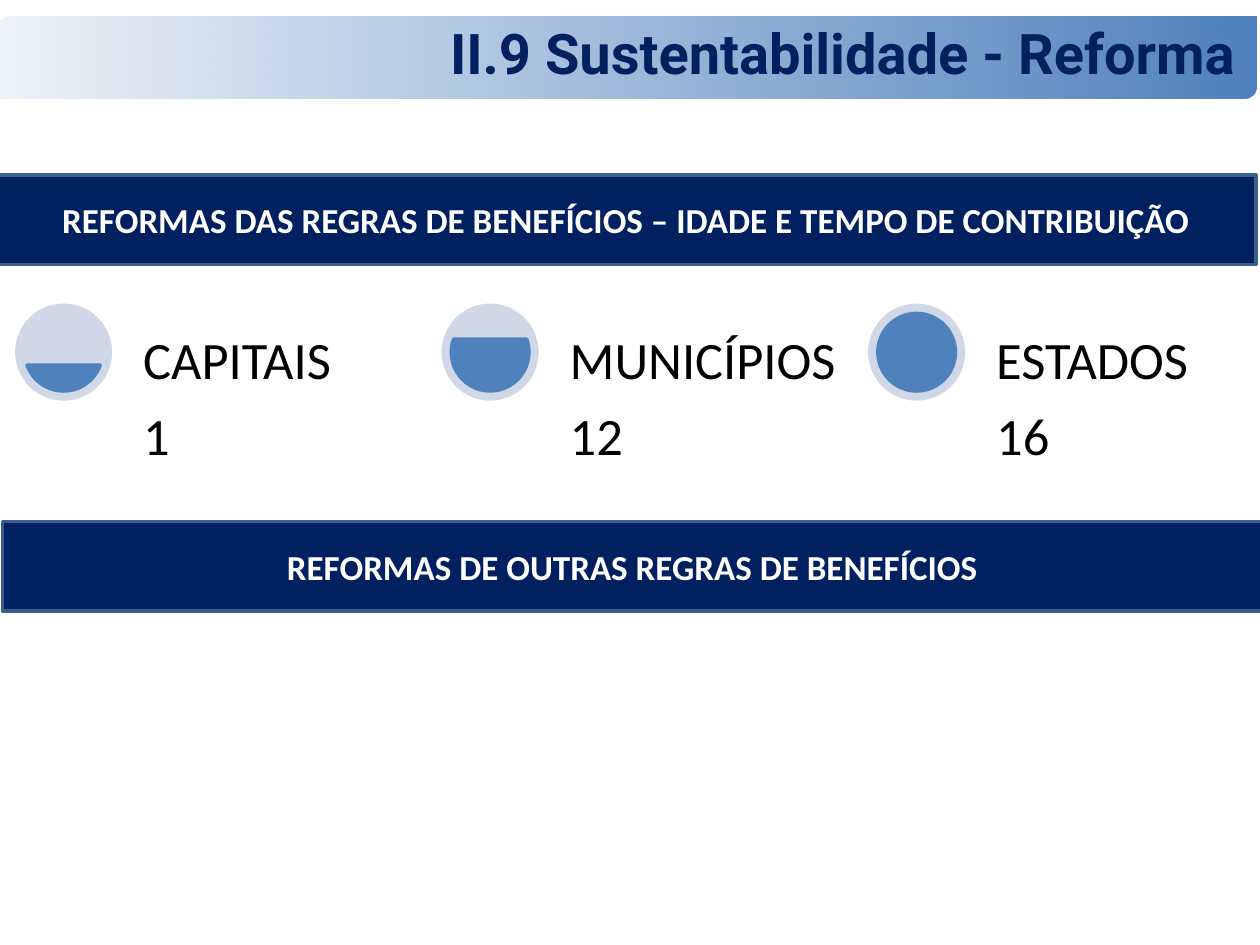
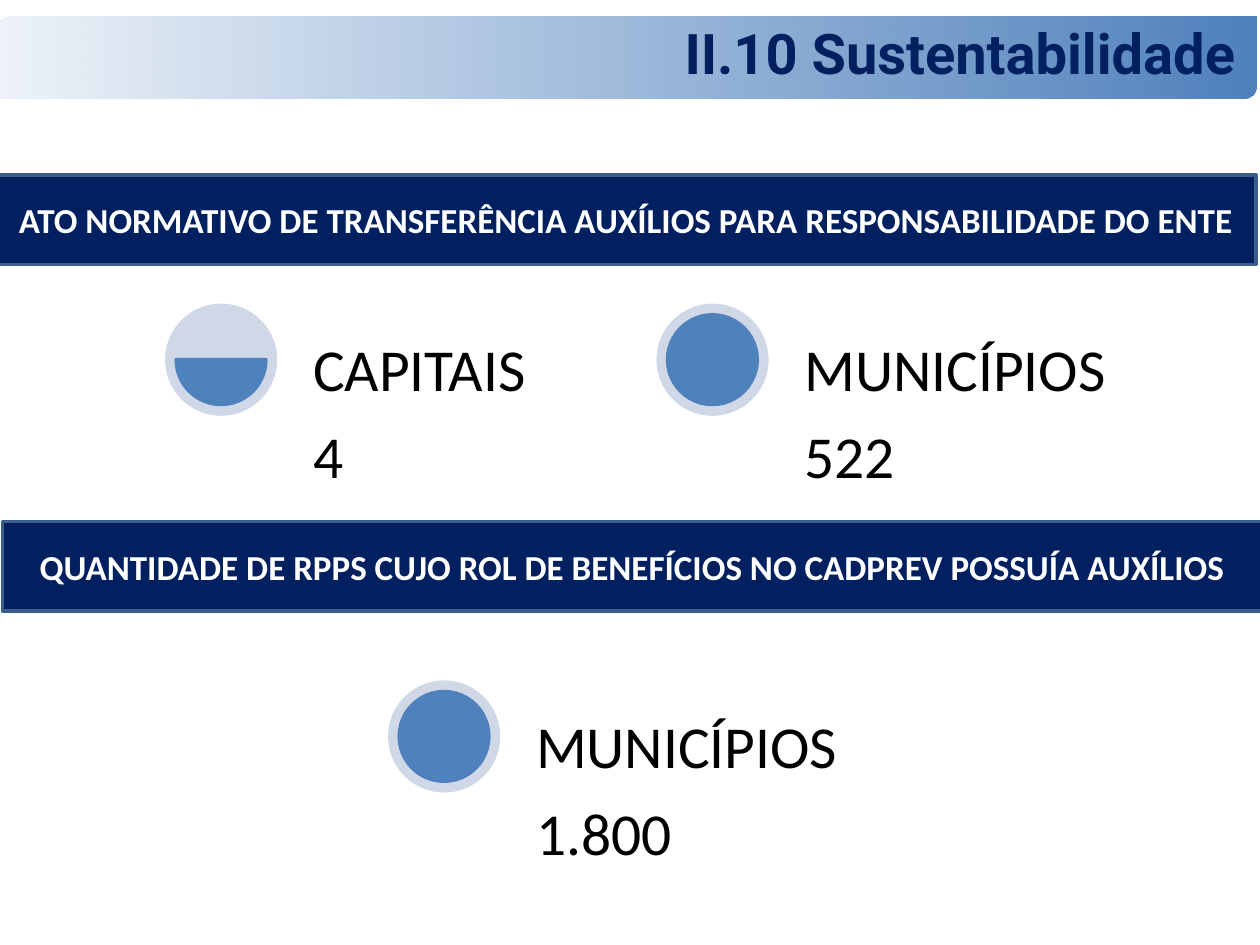
"""Build two slides on pension reform counts with partly filled dials."""
from math import asin, degrees

from lxml import etree
from pptx import Presentation
from pptx import util as u
from pptx.dml.color import RGBColor
from pptx.enum import shapes, text
from pptx.oxml.ns import qn

BLUE = RGBColor(0x4F, 0x81, 0xBD)
PALE = RGBColor(0xD0, 0xD8, 0xE8)
NAVY = RGBColor(0x00, 0x20, 0x60)
EDGE = RGBColor(0x3A, 0x5F, 0x8C)
WHITE = RGBColor(0xFF, 0xFF, 0xFF)
BLACK = RGBColor(0x00, 0x00, 0x00)

KIND = shapes.MSO_SHAPE
ALIGN = text.PP_ALIGN
ANCHOR = text.MSO_ANCHOR


def add_form(slide, kind, box, fill=None, line=None):
    """Add a preset shape with an optional fill and 2 pt line."""
    form = slide.shapes.add_shape(kind, *map(u.Inches, box))
    form.shadow.inherit = False
    if fill is not None:
        form.fill.solid()
        form.fill.fore_color.rgb = fill
    if line is None:
        form.line.fill.background()
    else:
        form.line.color.rgb = line
        form.line.width = u.Pt(2)
    return form


def set_words(form, words, size, color, face="Calibri", bold=False,
              align=ALIGN.LEFT, anchor=ANCHOR.MIDDLE, space=None):
    """Write one formatted paragraph into a shape."""
    frame = form.text_frame
    frame.text = words
    frame.word_wrap = True
    frame.vertical_anchor = anchor
    para = frame.paragraphs[0]
    para.alignment = align
    para.line_spacing = space
    font = para.runs[0].font
    font.name, font.size, font.bold = face, u.Pt(size), bold
    font.color.rgb = color


def add_text(slide, box, words, size, color, inset, left=None, **style):
    """Add a text box with equal insets, or a wider left one."""
    form = slide.shapes.add_textbox(*map(u.Inches, box))
    frame = form.text_frame
    frame.margin_top = frame.margin_right = frame.margin_bottom = u.Inches(inset)
    frame.margin_left = u.Inches(inset if left is None else left)
    set_words(form, words, size, color, space=0.9, **style)


def add_title(slide, words):
    """Add the fading bar and the slide title on it."""
    bar = add_form(slide, KIND.ROUND_2_DIAG_RECTANGLE, (-0.03, 0.13, 10, 0.65))
    bar.fill.gradient()
    bar.fill.gradient_angle = 0
    for stop, place in zip(bar.fill.gradient_stops, (0, 1)):
        stop.color.rgb = BLUE
        stop.position = place
    first = bar._element.spPr.find(".//" + qn("a:srgbClr"))
    etree.SubElement(first, qn("a:alpha"), val="10000")
    add_text(slide, (0, 0.16, 9.94, 0.58), words, 32, NAVY, 0.13, left=3,
             face="Roboto", bold=True, align=ALIGN.RIGHT)


def add_band(slide, left, top, words):
    """Add a navy heading band."""
    band = add_form(slide, KIND.RECTANGLE, (left, top, 10, 0.71), NAVY, EDGE)
    set_words(band, words, 20, WHITE, bold=True, align=ALIGN.CENTER)


def add_dial(slide, left, top, side, share):
    """Add a disc whose inner chord is filled up to the given share."""
    add_form(slide, KIND.OVAL, (left, top, side, side), PALE)
    gap = side / 10
    inner = side - 2 * gap
    chord = add_form(slide, KIND.CHORD, (left + gap, top + gap, inner, inner),
                     BLUE, BLUE)
    start = degrees(asin(1 - 2 * share))
    for spot, angle in enumerate((start, 180 - start)):
        chord.adjustments[spot] = angle % 360 * 0.6


def add_group(slide, left, top, side, size, step, items):
    """Add a row of dials, each with its label and count."""
    for spot, (label, count) in enumerate(items):
        place = left + spot * step
        add_dial(slide, place, top, side, (spot + 1) / len(items))
        edge, width = place + 1.22 * side, 2.97 * side
        add_text(slide, (edge, top + side, width, 4.22 * side), count, size,
                 BLACK, side / 10, anchor=ANCHOR.TOP)
        add_text(slide, (edge, top, width, side), label, size,
                 BLACK, side / 10, anchor=ANCHOR.BOTTOM)


def add_page(deck, title, upper, lower):
    """Add a slide with its title and two bands."""
    slide = deck.slides.add_slide(deck.slide_layouts[6])
    add_title(slide, title)
    add_band(slide, -0.03, 1.39, upper)
    add_band(slide, 0.02, 4.14, lower)
    return slide


def main():
    """Build and save the deck."""
    deck = Presentation()
    deck.slide_width, deck.slide_height = u.Inches(10), u.Inches(7.5)

    rules = add_page(
        deck, "II.9 Sustentabilidade - Reforma",
        "REFORMAS DAS REGRAS DE BENEFÍCIOS – IDADE E TEMPO DE CONTRIBUIÇÃO",
        "REFORMAS DE OUTRAS REGRAS DE BENEFÍCIOS")
    add_group(rules, 0.12, 2.41, 0.77, 30, 3.385,
              [("CAPITAIS", "1"), ("MUNICÍPIOS", "12"), ("ESTADOS", "16")])

    aid = add_page(
        deck, "II.10 Sustentabilidade",
        "ATO NORMATIVO DE TRANSFERÊNCIA AUXÍLIOS PARA RESPONSABILIDADE DO ENTE",
        "QUANTIDADE DE RPPS CUJO ROL DE BENEFÍCIOS NO CADPREV POSSUÍA AUXÍLIOS")
    add_group(aid, 1.31, 2.41, 0.89, 34, 3.9,
              [("CAPITAIS", "4"), ("MUNICÍPIOS", "522")])
    add_group(aid, 3.08, 5.4, 0.89, 34, 0, [("MUNICÍPIOS", "1.800")])

    deck.save("out.pptx")


if __name__ == "__main__":
    main()
